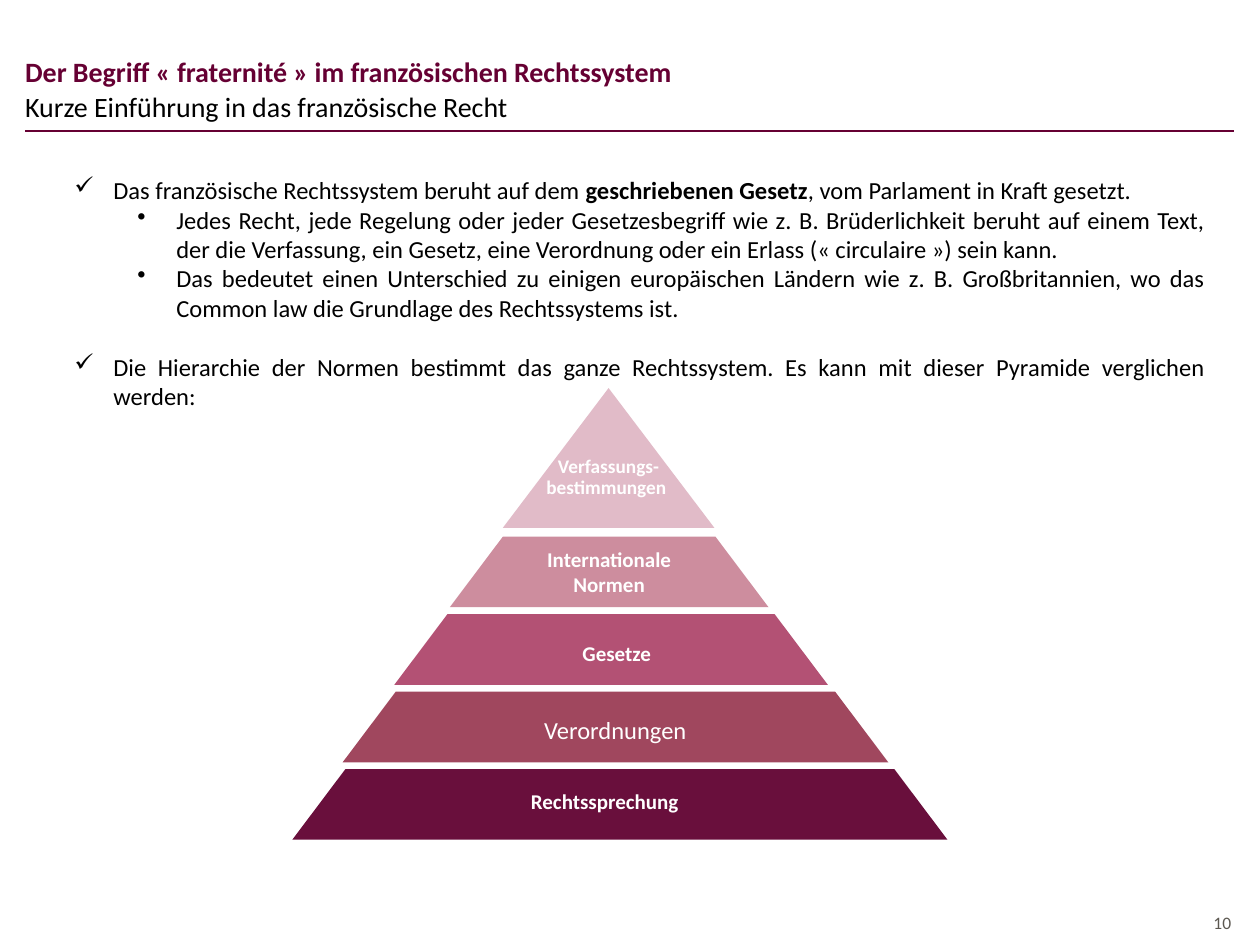
from dataclasses import dataclass

from lxml.etree import SubElement
from pptx import Presentation
from pptx.dml.color import RGBColor
from pptx.enum.shapes import MSO_CONNECTOR, MSO_SHAPE as Preset
from pptx.enum.text import MSO_ANCHOR as Anchor, PP_ALIGN as Align
from pptx.oxml.ns import qn
from pptx.util import Inches, Pt

# The slide is a grid of 100 columns by 75 rows
COLUMNS, ROWS = 100, 75
WIDTH, HEIGHT = Inches(10), Inches(7.5)
WINE, BLACK, WHITE, GREY = "660033", "000000", "FFFFFF", "5C5851"


@dataclass
class Area:
    column: float
    row: float
    columns: float
    rows: float

    def emu(self) -> tuple:
        return (across(self.column), down(self.row),
                across(self.columns), down(self.rows))


@dataclass
class Point:
    level: int
    runs: list
    gap: float = 0


@dataclass
class Tier:
    column: float
    columns: float
    color: str


@dataclass
class Label:
    text: str
    area: Area


def across(columns: float) -> int:
    return int(WIDTH * columns / COLUMNS)


def down(rows: float) -> int:
    return int(HEIGHT * rows / ROWS)


def rgb(color: str) -> RGBColor:
    return RGBColor.from_string(color)


def set_frame(frame, insets=(0, 0, 0, 0), **formats) -> None:
    sides = ("left", "top", "right", "bottom")
    values = {f"margin_{side}": Inches(inset) for side, inset in zip(sides, insets)}
    for name, value in ({"word_wrap": True} | values | formats).items():
        setattr(frame, name, value)


def add_run(paragraph, text: str, size: float, color: str, bold=False) -> None:
    run = paragraph.add_run()
    run.text = text
    for name, value in {"name": "Calibri", "size": Pt(size), "bold": bold}.items():
        setattr(run.font, name, value)
    run.font.color.rgb = rgb(color)


def add_text(shapes, area: Area, text: str, size: float, color: str, bold=False,
             align=Align.LEFT, insets=(0, 0.05, 0.1, 0.05), anchor=Anchor.TOP) -> None:
    frame = shapes.add_textbox(*area.emu()).text_frame
    set_frame(frame, insets, vertical_anchor=anchor)
    frame.paragraphs[0].alignment = align
    add_run(frame.paragraphs[0], text, size, color, bold)


def add_points(shapes, area: Area, points: list) -> None:
    bullets = {1: ("✓", 0.7), 2: ("•", 1.2)}
    frame = shapes.add_textbox(*area.emu()).text_frame
    set_frame(frame)
    for index, point in enumerate(points):
        paragraph = frame.add_paragraph() if index else frame.paragraphs[0]
        mark, indent = bullets[point.level]
        formats = {"alignment": Align.JUSTIFY, "level": point.level,
                   "space_before": Pt(point.gap)}
        for name, value in formats.items():
            setattr(paragraph, name, value)
        properties = paragraph._p.get_or_add_pPr()
        properties.set("marL", str(Inches(indent)))
        properties.set("indent", str(Inches(-0.31)))
        SubElement(properties, qn("a:buChar")).set("char", mark)
        for text, bold in point.runs:
            add_run(paragraph, text, 14, BLACK, bold)


def add_block(shapes, preset, area: Area, color: str, adjustment: float):
    block = shapes.add_shape(preset, *area.emu())
    block.shadow.inherit = False
    block.fill.solid()
    block.fill.fore_color.rgb = rgb(color)
    block.line.fill.background()
    block.adjustments[0] = adjustment
    return block


POINTS = [
    Point(1, [("Das französische Rechtssystem beruht auf dem ", False),
              ("geschriebenen Gesetz", True),
              (", vom Parlament in Kraft gesetzt.", False)]),
    Point(2, [("Jedes Recht, jede Regelung oder jeder Gesetzesbegriff wie z. B. "
               "Brüderlichkeit beruht auf einem Text, der die Verfassung, ein Gesetz, "
               "eine Verordnung oder ein Erlass (« circulaire ») sein kann.", False)]),
    Point(2, [("Das bedeutet einen Unterschied zu einigen europäischen Ländern wie "
               "z. B. Großbritannien, wo das Common law die Grundlage des "
               "Rechtssystems ist.", False)]),
    Point(1, [("Die Hierarchie der Normen bestimmt das ganze Rechtssystem. Es kann "
               "mit dieser Pyramide verglichen werden:", False)], gap=17),
]
TIERS = [Tier(35.7, 25.3, "CD8D9E"), Tier(31.3, 34.4, "B35174"),
         Tier(27.2, 43.3, "A0475E"), Tier(23.2, 52, "690F3C")]
FIRST_TIER, TIER_STEP, TIER_ROWS = 42.6, 6.15, 5.6
LABELS = [Label("Internationale Normen", Area(39.5, 42.9, 17.7, 5)),
          Label("Gesetze", Area(39.8, 50.3, 18.3, 3)),
          Label("Rechtssprechung", Area(39.3, 62.1, 17.4, 3))]


def add_pyramid(shapes) -> None:
    # Tip
    tip = add_block(shapes, Preset.ISOSCELES_TRIANGLE,
                    Area(39.9, 30.8, 16.8, 11.1), "E1BBC8", 0.5).text_frame
    set_frame(tip, (0, 0, 0, 0.24), word_wrap=False, vertical_anchor=Anchor.MIDDLE)
    for index, text in enumerate(("Verfassungs-", "bestimmungen ")):
        paragraph = tip.add_paragraph() if index else tip.paragraphs[0]
        paragraph.alignment, paragraph.line_spacing = Align.CENTER, 0.9
        add_run(paragraph, text, 11, WHITE, True)

    # Tiers
    tiers = [add_block(shapes, Preset.TRAPEZOID,
                       Area(tier.column, FIRST_TIER + index * TIER_STEP,
                            tier.columns, TIER_ROWS), tier.color, 0.752)
             for index, tier in enumerate(TIERS)]
    decrees = tiers[2].text_frame
    set_frame(decrees, (0.1, 0.05, 0.1, 0.05), vertical_anchor=Anchor.MIDDLE)
    decrees.paragraphs[0].alignment = Align.CENTER
    add_run(decrees.paragraphs[0], "Verordnungen", 14, WHITE)

    # Labels over the tiers
    for label in LABELS:
        add_text(shapes, label.area, label.text, 12, WHITE, True, Align.CENTER,
                 (0.1, 0.05, 0.1, 0.05), Anchor.MIDDLE)


def main() -> None:
    deck = Presentation()
    deck.slide_width, deck.slide_height = WIDTH, HEIGHT
    shapes = deck.slides.add_slide(deck.slide_layouts[6]).shapes

    # Heading, rule and page number
    rule = shapes.add_connector(MSO_CONNECTOR.STRAIGHT, across(2), down(10.4),
                                across(97.9), down(10.4))
    rule.line.color.rgb, rule.line.width = rgb(WINE), Pt(1)
    SubElement(rule._element.spPr, qn("a:effectLst"))
    add_text(shapes, Area(63.8, 71.9, 33.9, 2.7), "10", 10, GREY,
             align=Align.RIGHT, insets=(0, 0.05, 0, 0.05))
    add_text(shapes, Area(2, 6.6, 96, 3.6),
             "Kurze Einführung in das französische Recht", 16, BLACK)
    add_text(shapes, Area(2, 3.8, 96, 3.2),
             "Der Begriff « fraternité » im französischen Rechtssystem", 16, WINE, True)

    # Body
    add_points(shapes, Area(2, 13.9, 93.7, 50.4), POINTS)
    add_pyramid(shapes.add_group_shape().shapes)
    deck.save("out.pptx")


if __name__ == "__main__":
    main()
